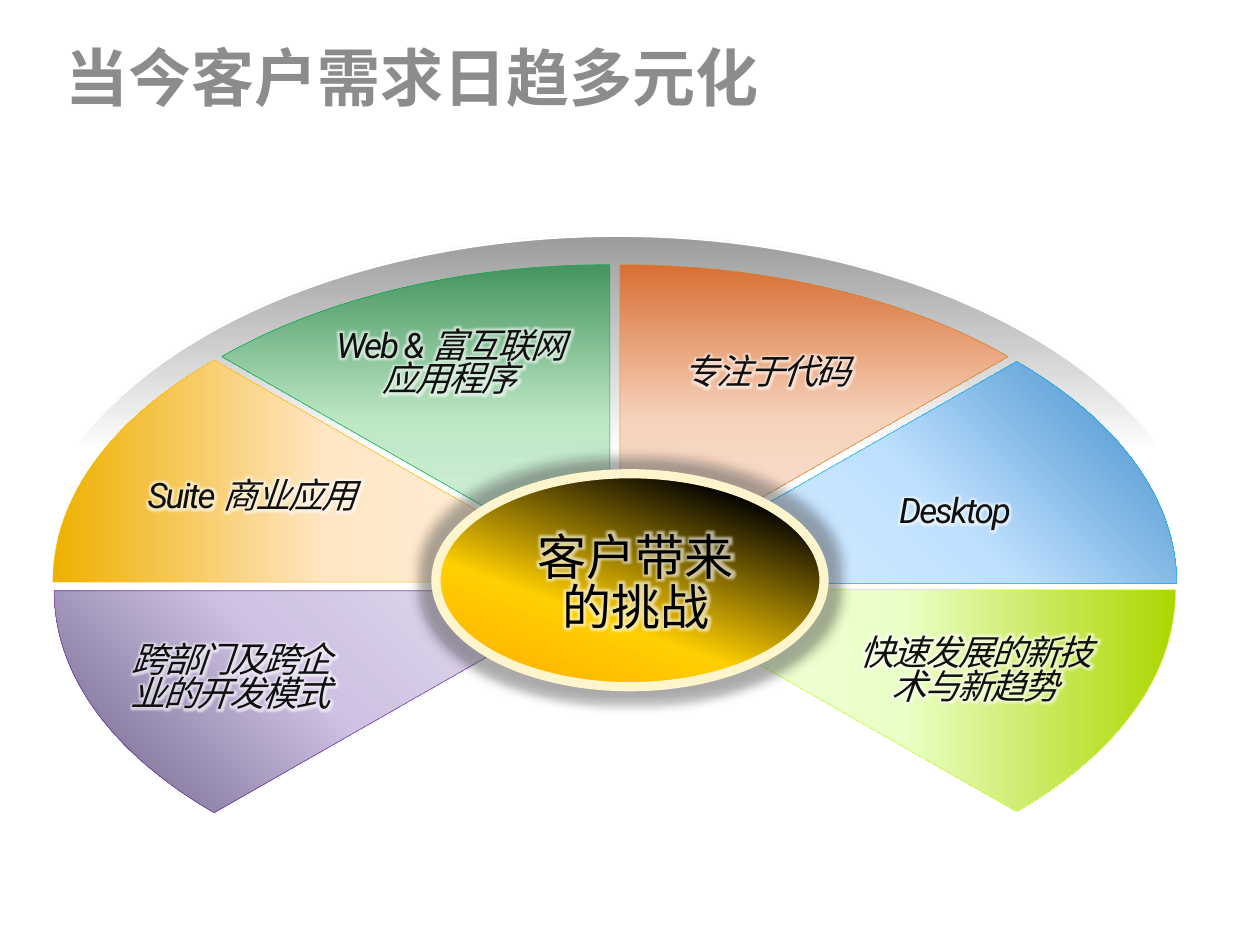
from dataclasses import dataclass

import pptx
import pptx.dml.color
import pptx.enum.shapes
import pptx.enum.text
import pptx.oxml
import pptx.oxml.ns
import pptx.util
from pptx.util import Inches

NAMESPACE = 'xmlns:a="http://schemas.openxmlformats.org/drawingml/2006/main"'


@dataclass
class Stop:
    position: int
    colour: str
    alpha: int = 100


@dataclass
class Wedge:
    apex: tuple[float, float]
    arc: list[tuple[float, float]]
    colours: tuple[str, str, str]
    angle: int
    outline: str


@dataclass
class Label:
    left: float
    top: float
    width: float
    height: float
    lines: list[str]
    size: int = 20
    spacing: float = 0.8
    italic: bool = True
    tracking: int = -120


WEDGES = [
    Wedge((4.98, 4.63), [(8.07, 2.87), (8.85, 3.32), (9.34, 3.94), (9.34, 4.63)],
          ("3987C7", "BFE1FF", "E0EFFF"), 135, "00B0F0"),
    Wedge((4.78, 4.62), [(0.42, 4.62), (0.42, 3.93), (0.91, 3.31), (1.7, 2.86)],
          ("EEB000", "FFE6C5", "FFF2E3"), 0, "FFC000"),
    Wedge((4.84, 4.59), [(1.76, 2.83), (2.55, 2.38), (3.64, 2.1), (4.84, 2.1)],
          ("469460", "BDE8C5", "DFF3E3"), 90, "00B050"),
    Wedge((4.78, 4.69), [(1.7, 6.45), (0.92, 6), (0.43, 5.38), (0.43, 4.69)],
          ("685D85", "CEC1E2", "E7E1F0"), 315, "7030A0"),
    Wedge((4.92, 4.59), [(4.92, 2.1), (6.12, 2.1), (7.21, 2.38), (8, 2.83)],
          ("D86F34", "F7D3BC", "FAE9DE"), 90, "D08B30"),
    Wedge((4.99, 4.68), [(9.33, 4.68), (9.33, 5.37), (8.85, 5.99), (8.07, 6.44)],
          ("ADD600", "EAFFC7", "F4FFE4"), 180, "CCFF33"),
]

LABELS = [
    Label(1, 5.16, 1.66, 0.47, ["跨部门及跨企业的开发模式"]),
    Label(3.75, 4.41, 2.59, 0.47, ["客户带来", "的挑战"], 28, 0.85, False, 0),
    Label(1.02, 3.61, 1.96, 0.69, ["Suite 商业应用"]),
    Label(2.59, 2.77, 1.96, 0.25, ["Web & 富互联网应用程序"]),
    Label(5.11, 2.85, 1.96, 0.25, ["专注于代码"]),
    Label(6.6, 3.95, 1.96, 0.25, ["Desktop"]),
    Label(6.76, 5.21, 1.96, 0.25, ["快速发展的新技术与新趋势"]),
]


def rgb(colour: str) -> pptx.dml.color.RGBColor:
    return pptx.dml.color.RGBColor.from_string(colour)


def colour_xml(colour: str, alpha: int) -> str:
    return f'<a:srgbClr val="{colour}"><a:alpha val="{alpha * 1000}"/></a:srgbClr>'


def glow_xml(colour: str, alpha: int, radius: float) -> str:
    return f'<a:glow rad="{pptx.util.Pt(radius)}">{colour_xml(colour, alpha)}</a:glow>'


def shadow_xml(colour: str, alpha: int, blur: float, distance: float) -> str:
    return (f'<a:outerShdw blurRad="{pptx.util.Pt(blur)}" dist="{pptx.util.Pt(distance)}" '
            f'dir="5400000" algn="ctr" rotWithShape="0">{colour_xml(colour, alpha)}</a:outerShdw>')


def effects_element(effect: str):
    return pptx.oxml.parse_xml(f'<a:effectLst {NAMESPACE}>{effect}</a:effectLst>')


def set_effect(shape, effect: str) -> None:
    current = shape._element.spPr.find(pptx.oxml.ns.qn("a:effectLst"))
    current.getparent().replace(current, effects_element(effect))


def fill_gradient(shape, stops: list[Stop], angle: int) -> None:
    shape.fill.gradient()
    gradient = shape._element.spPr.find(pptx.oxml.ns.qn("a:gradFill"))
    entries = "".join(f'<a:gs pos="{stop.position * 1000}">'
                      f'{colour_xml(stop.colour, stop.alpha)}</a:gs>' for stop in stops)
    gradient.getparent().replace(gradient, pptx.oxml.parse_xml(
        f'<a:gradFill {NAMESPACE} rotWithShape="1"><a:gsLst>{entries}</a:gsLst>'
        f'<a:lin ang="{angle * 60000}" scaled="0"/></a:gradFill>'))


def set_outline(shape, colour: str, width: float) -> None:
    shape.line.color.rgb = rgb(colour)
    shape.line.width = pptx.util.Pt(width)


def draw_ellipse(page, left: float, top: float, width: float, height: float):
    shape = page.shapes.add_shape(pptx.enum.shapes.MSO_SHAPE.OVAL,
                                  Inches(left), Inches(top), Inches(width), Inches(height))
    shape.shadow.inherit = False
    return shape


def bend_arc(shape) -> None:
    segments = list(shape._element.spPr.iter(pptx.oxml.ns.qn("a:lnTo")))[1:4]
    curve = pptx.oxml.parse_xml(f'<a:cubicBezTo {NAMESPACE}/>')
    segments[0].addprevious(curve)
    for segment in segments:
        curve.append(segment[0])
        segment.getparent().remove(segment)


def draw_wedge(page, wedge: Wedge) -> None:
    builder = page.shapes.build_freeform(*map(Inches, wedge.apex), scale=1.0)
    builder.add_line_segments([(Inches(x), Inches(y)) for x, y in wedge.arc], close=True)
    shape = builder.convert_to_shape()
    bend_arc(shape)
    shape.shadow.inherit = False
    stops = [Stop(position, colour) for position, colour in zip((0, 50, 100), wedge.colours)]
    fill_gradient(shape, stops, wedge.angle)
    set_outline(shape, wedge.outline, 0.25)


def draw_label(page, label: Label) -> None:
    box = page.shapes.add_textbox(Inches(label.left), Inches(label.top),
                                  Inches(label.width), Inches(label.height))
    frame = box.text_frame
    frame.word_wrap = True
    frame.vertical_anchor = pptx.enum.text.MSO_ANCHOR.MIDDLE
    frame.margin_left = frame.margin_right = frame.margin_top = frame.margin_bottom = 0
    for index, line in enumerate(label.lines):
        para = frame.add_paragraph() if index else frame.paragraphs[0]
        para.alignment = pptx.enum.text.PP_ALIGN.CENTER
        para.line_spacing = label.spacing
        span = para.add_run()
        span.text = line
        span.font.size = pptx.util.Pt(label.size)
        span.font.italic = label.italic
        span.font.color.rgb = rgb("0F0F0F" if label.italic else "000000")
        properties = span._r.get_or_add_rPr()
        properties.set("spc", str(label.tracking))
        properties.append(effects_element(glow_xml("FFFFFF", 60, 8)))
        span.font.name = "Roboto"


def draw_title(page, text: str) -> None:
    box = page.shapes.add_textbox(Inches(0.42), Inches(0.24), Inches(9.17), Inches(0.73))
    box.text_frame.word_wrap = True
    box.text_frame.vertical_anchor = pptx.enum.text.MSO_ANCHOR.MIDDLE
    span = box.text_frame.paragraphs[0].add_run()
    span.text = text
    span.font.name = "Calibri"
    span.font.size = pptx.util.Pt(36)
    span.font.bold = True
    span.font.color.rgb = rgb("8C8C8C")


def draw_hub(page) -> None:
    halo = draw_ellipse(page, 3.33, 3.62, 3.33, 1.97)
    fill_gradient(halo, [Stop(0, "FFFFFF", 17), Stop(100, "FFFFFF", 17)], 0)
    halo.line.fill.background()
    set_effect(halo, shadow_xml("000000", 32, 3.5, 2.2))
    hub = draw_ellipse(page, 3.46, 3.76, 3.08, 1.69)
    fill_gradient(hub, [Stop(0, "FFAA01"), Stop(36, "FFCF01"), Stop(86, "000000")], 290)
    set_outline(hub, "FFF5CD", 5.25)
    set_effect(hub, glow_xml("000000", 30, 14))


def main() -> None:
    deck = pptx.Presentation()
    deck.slide_width, deck.slide_height = Inches(10), Inches(7.5)
    page = deck.slides.add_slide(deck.slide_layouts[6])
    draw_title(page, "当今客户需求日趋多元化")
    backdrop = draw_ellipse(page, 0.19, 1.87, 9.42, 5.61)
    fill_gradient(backdrop, [Stop(0, "000000", 0), Stop(70, "000000", 0),
                             Stop(100, "000000", 39)], 270)
    set_outline(backdrop, "FFFFFF", 1.5)
    for wedge in WEDGES:
        draw_wedge(page, wedge)
    draw_hub(page)
    for label in LABELS:
        draw_label(page, label)
    deck.save("out.pptx")


if __name__ == "__main__":
    main()
